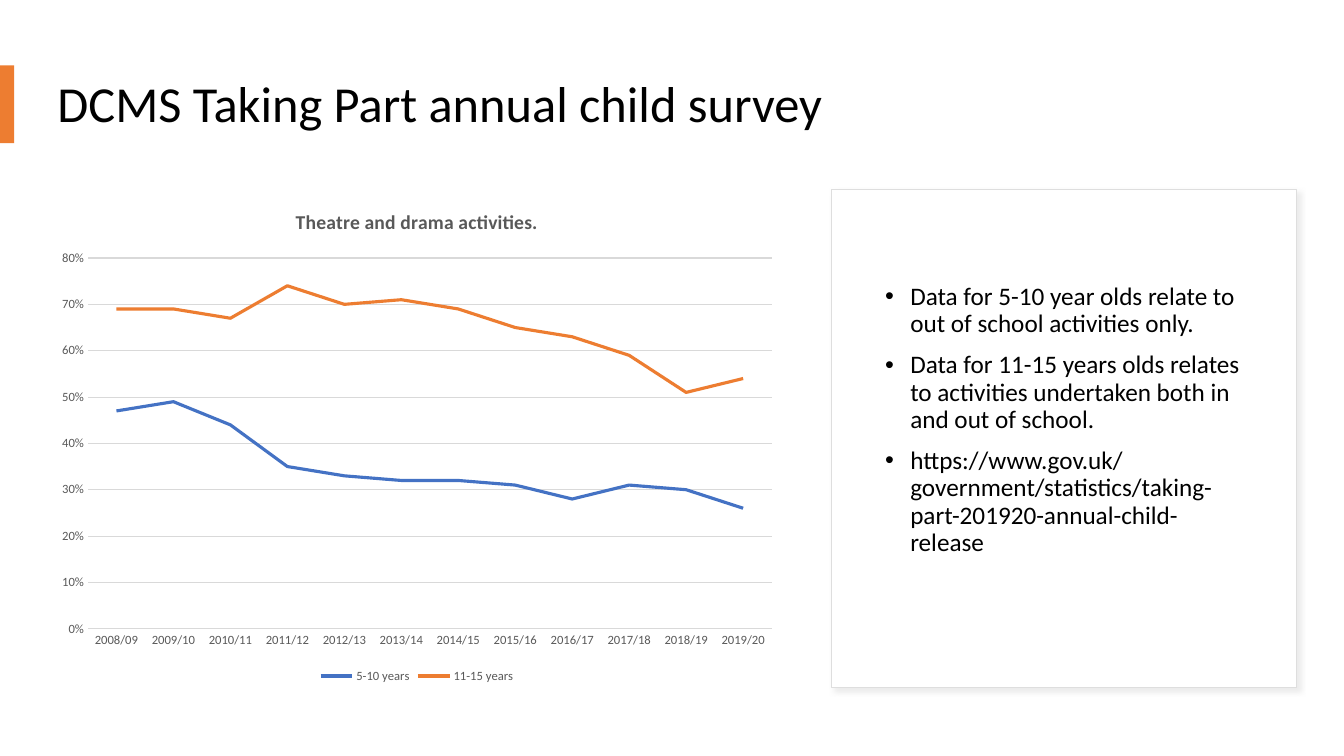
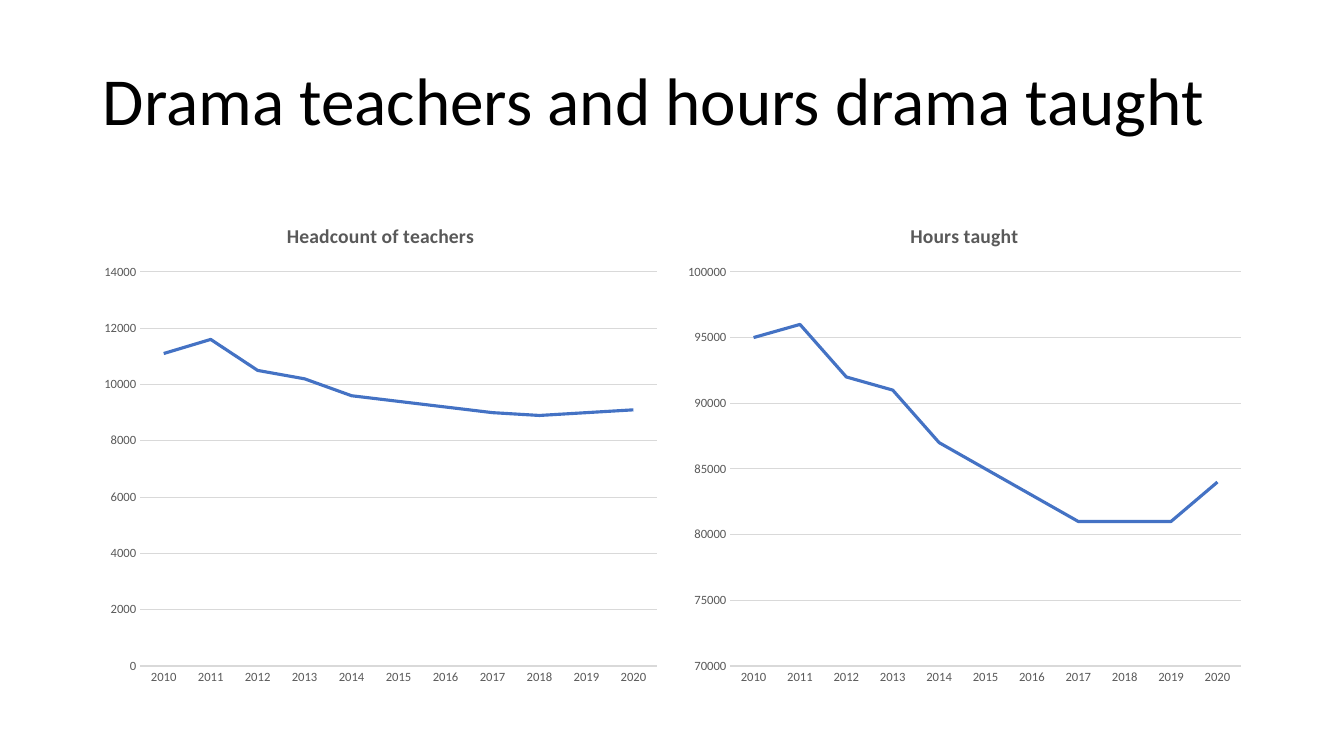
import dataclasses

import lxml.etree
import pptx
import pptx.chart.data
import pptx.dml.color
import pptx.enum.chart
import pptx.enum.shapes
import pptx.enum.text
import pptx.oxml
import pptx.oxml.ns
import pptx.util


@dataclasses.dataclass(frozen=True)
class Theme:
    """Colours, font and type sizes of the deck."""
    font: str = "Calibri"
    ink: str = "000000"
    paper: str = "FFFFFF"
    grey: str = "595959"
    rule: str = "D9D9D9"
    edge: str = "DEDEDE"
    blue: str = "4472C4"
    orange: str = "ED7D31"
    head: int = 36
    large: int = 48
    body: int = 18
    label: int = 14
    tick: int = 9


THEME = Theme()


def tint(code):
    """Turn a hex code into a colour."""
    return pptx.dml.color.RGBColor.from_string(code)


def place(box):
    """Turn left, top, width and height into lengths."""
    return [pptx.util.Inches(part) for part in box]


def style(font, size, color):
    """Set name, size and colour of a font."""
    font.name = THEME.font
    font.size = pptx.util.Pt(size)
    font.color.rgb = tint(color)


def stroke(line, color, width=0.75):
    """Draw a line in one colour."""
    line.color.rgb = tint(color)
    line.width = pptx.util.Pt(width)


def write(frame, *lines, size, color=THEME.ink, align=None, space=None, before=None, bullet=None):
    """Fill a text frame with one paragraph for each line."""
    for count, line in enumerate(lines):
        para = frame.add_paragraph() if count else frame.paragraphs[0]
        run = para.add_run()
        run.text = line
        style(run.font, size, color)
        para.alignment = align
        para.line_spacing = space
        if before is not None:
            para.space_before = pptx.util.Pt(before)
        if bullet:
            props = para._p.get_or_add_pPr()
            dent = pptx.util.Inches(0.25)
            props.set("marL", str(dent))
            props.set("indent", str(-dent))
            for tag, key, value in (("a:buFont", "typeface", "Arial"), ("a:buChar", "char", bullet)):
                lxml.etree.SubElement(props, pptx.oxml.ns.qn(tag)).set(key, value)


def head(slide, box, text, size):
    """Move and fill the title."""
    title = slide.shapes.title
    title.left, title.top, title.width, title.height = place(box)
    frame = title.text_frame
    frame.word_wrap = True
    frame.vertical_anchor = pptx.enum.text.MSO_ANCHOR.MIDDLE
    frame.auto_size = pptx.enum.text.MSO_AUTO_SIZE.NONE
    write(frame, text, size=size, space=0.9, align=pptx.enum.text.PP_ALIGN.LEFT)


def block(slide, box, fill, edge=None):
    """Add a plain filled box."""
    shape = slide.shapes.add_shape(pptx.enum.shapes.MSO_SHAPE.RECTANGLE, *place(box))
    shape.shadow.inherit = False
    shape.fill.solid()
    shape.fill.fore_color.rgb = tint(fill)
    if edge:
        stroke(shape.line, edge)
    else:
        shape.line.fill.background()
    return shape


def shade(shape):
    """Give a shape a soft shadow at lower right."""
    list_ = shape.element.spPr.find(pptx.oxml.ns.qn("a:effectLst"))
    list_.append(pptx.oxml.parse_xml(
        f'<a:outerShdw {pptx.oxml.ns.nsdecls("a")} blurRad="{pptx.util.Pt(4)}" '
        f'dist="{pptx.util.Pt(3)}" dir="2700000" algn="tl" rotWithShape="0">'
        f'<a:srgbClr val="{THEME.rule}"><a:alpha val="50000"/></a:srgbClr></a:outerShdw>'))


def card(slide, box, notes):
    """Add a framed card with a bullet list inside."""
    left, top, width, height = box
    shade(block(slide, box, THEME.paper, THEME.edge))
    inner = left + 0.43, top + 0.33, width - 0.83, height - 0.61
    frame = slide.shapes.add_textbox(*place(inner)).text_frame
    frame.word_wrap = True
    frame.vertical_anchor = pptx.enum.text.MSO_ANCHOR.MIDDLE
    frame.margin_bottom = pptx.util.Inches(0.46)
    write(frame, *notes, size=THEME.body, space=0.9, before=10, bullet="•")


def graph(slide, box, title, cats, rows, scale, form="0", legend=False):
    """Add a line chart with one line for each row."""
    data = pptx.chart.data.CategoryChartData(number_format=form)
    data.categories = cats
    for name, values in rows.items():
        data.add_series(name, values)
    kind = pptx.enum.chart.XL_CHART_TYPE.LINE
    chart = slide.shapes.add_chart(kind, *place(box), data).chart
    style(chart.font, THEME.tick, THEME.grey)
    chart.has_title = True
    write(chart.chart_title.text_frame, title, size=THEME.label, color=THEME.grey)
    chart.chart_title.include_in_layout = False
    chart.has_legend = legend
    if legend:
        chart.legend.position = pptx.enum.chart.XL_LEGEND_POSITION.BOTTOM
        chart.legend.include_in_layout = False
        style(chart.legend.font, THEME.tick, THEME.grey)
    chart.plots[0].vary_by_categories = False
    for row, color in zip(chart.plots[0].series, (THEME.blue, THEME.orange)):
        row.smooth = False
        row.marker.style = pptx.enum.chart.XL_MARKER_STYLE.NONE
        stroke(row.format.line, color, 2.25)
    for axis in (chart.category_axis, chart.value_axis):
        axis.major_tick_mark = axis.minor_tick_mark = pptx.enum.chart.XL_TICK_MARK.NONE
        style(axis.tick_labels.font, THEME.tick, THEME.grey)
    stroke(chart.category_axis.format.line, THEME.rule)
    axis = chart.value_axis
    axis.minimum_scale, axis.maximum_scale, axis.major_unit = scale
    axis.format.line.fill.background()
    axis.has_major_gridlines = True
    stroke(axis.major_gridlines.format.line, THEME.rule)
    axis.tick_labels.number_format = form
    axis.tick_labels.number_format_is_linked = False


def survey(slide):
    """Build the survey slide with chart and card."""
    head(slide, (0.47, 0.45, 12.25, 1.21), "DCMS Taking Part annual child survey", THEME.head)
    block(slide, (0, 0.65, 0.14, 0.77), THEME.orange)
    top, height = 1.88, 4.94
    card(slide, (8.25, top, 4.61, height), (
        "Data for 5-10 year olds relate to out of school activities only.",
        "Data for 11-15 years olds relates to activities undertaken both in and out of school.",
        "https://www.gov.uk/government/statistics/taking-part-201920-annual-child-release"))
    years = [f"{year}/{year % 100 + 1:02}" for year in range(2008, 2020)]
    rows = {
        "5-10 years": (0.47, 0.49, 0.44, 0.35, 0.33, 0.32, 0.32, 0.31, 0.28, 0.31, 0.3, 0.26),
        "11-15 years": (0.69, 0.69, 0.67, 0.74, 0.7, 0.71, 0.69, 0.65, 0.63, 0.59, 0.51, 0.54)}
    graph(slide, (0.47, top, 7.33, height), "Theatre and drama activities.", years, rows,
          (0, 0.8, 0.1), form="0%", legend=True)


def staff(slide):
    """Build the slide with two charts side by side."""
    left, width, gap = 0.92, 5.71, 0.08
    head(slide, (left, 0.2, 2 * width + gap, 1.65), "Drama teachers and hours drama taught", THEME.large)
    years = [str(year) for year in range(2010, 2021)]
    charts = (
        ("Headcount of teachers", (0, 14000, 2000),
         (11100, 11600, 10500, 10200, 9600, 9400, 9200, 9000, 8900, 9000, 9100)),
        ("Hours taught", (70000, 100000, 5000),
         (95000, 96000, 92000, 91000, 87000, 85000, 83000, 81000, 81000, 81000, 84000)))
    for count, (name, scale, values) in enumerate(charts):
        box = left + count * (width + gap), 2.02, width, 4.87
        graph(slide, box, name, years, {name: values}, scale)


def main():
    """Build and save the deck."""
    deck = pptx.Presentation()
    deck.slide_width, deck.slide_height = pptx.util.Inches(13.33), pptx.util.Inches(7.5)
    for build in (survey, staff):
        build(deck.slides.add_slide(deck.slide_layouts[5]))
    deck.save("out.pptx")


if __name__ == "__main__":
    main()
